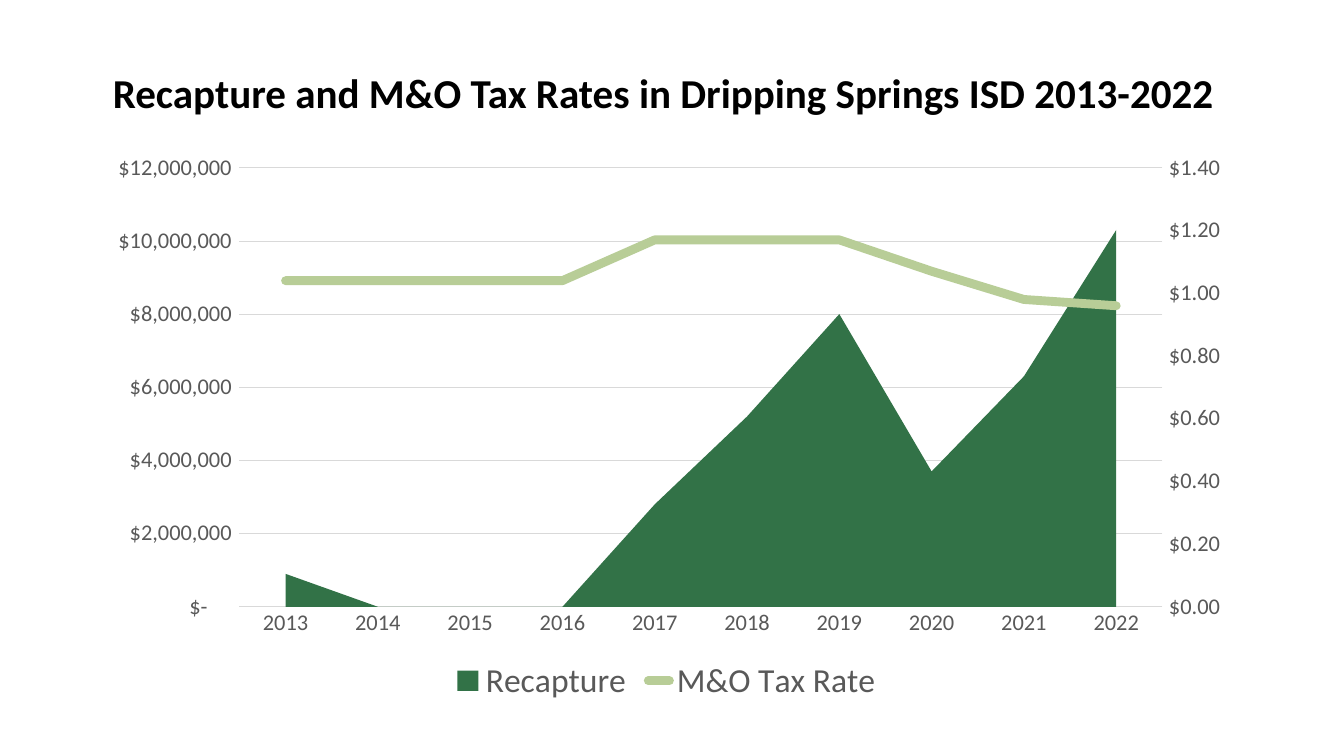
from copy import deepcopy

from pptx import Presentation
from pptx.chart.axis import ValueAxis
from pptx.chart.data import CategoryChartData
from pptx.dml.color import RGBColor
from pptx.enum.chart import XL_CHART_TYPE, XL_LEGEND_POSITION, XL_MARKER_STYLE, XL_TICK_MARK
from pptx.enum.text import MSO_ANCHOR, PP_ALIGN
from pptx.oxml import parse_xml
from pptx.oxml.ns import nsdecls, qn
from pptx.util import Cm, Pt

AREA = XL_CHART_TYPE.AREA
BOTTOM = XL_LEGEND_POSITION.BOTTOM
NO_MARKER = XL_MARKER_STYLE.NONE
TICK_NONE, TICK_OUTSIDE = XL_TICK_MARK.NONE, XL_TICK_MARK.OUTSIDE
LEFT, TOP = PP_ALIGN.LEFT, MSO_ANCHOR.TOP

FONT = "Calibri"
BLACK, GRAY, LIGHT_GRAY = "000000", "595959", "D9D9D9"
DARK_GREEN, LIGHT_GREEN = "327247", "B8CD97"

TITLE = "Recapture and M&O Tax Rates in Dripping Springs ISD 2013-2022"
YEARS = [str(year) for year in range(2013, 2023)]
RECAPTURE = [900000, 0, 0, 0, 2800000, 5200000, 8000000, 3700000, 6300000, 10300000]
TAX_RATES = [1.04, 1.04, 1.04, 1.04, 1.17, 1.17, 1.17, 1.07, 0.98, 0.96]
ACCOUNTING = '_("$"* #,##0_);_("$"* \\(#,##0\\);_("$"* "-"??_);_(@_)'
DOLLARS_AND_CENTS = '"$"#,##0.00'
RATE_CATEGORY_ID, RATE_VALUE_ID = "50010", "50020"


def color(hex_value):
    return RGBColor.from_string(hex_value)


def style_font(font, size, hex_value, bold=False):
    font.name, font.size, font.bold = FONT, Pt(size), bold
    font.color.rgb = color(hex_value)


def style_line(line, hex_value, width):
    line.color.rgb = color(hex_value)
    line.width = Pt(width)


def set_scale(axis, maximum, step, number_format):
    axis.minimum_scale, axis.maximum_scale, axis.major_unit = 0, maximum, step
    axis.tick_labels.number_format = number_format
    axis.tick_labels.number_format_is_linked = False


def add_title(slide, left, top, width, height):
    title = slide.shapes.title
    title.left, title.top, title.width, title.height = left, top, width, height
    frame = title.text_frame
    frame.text = TITLE
    frame.word_wrap = True
    frame.vertical_anchor = TOP
    paragraph = frame.paragraphs[0]
    paragraph.alignment = LEFT
    style_font(paragraph.runs[0].font, 44, BLACK, bold=True)


def style_axes(chart):
    for axis in (chart.category_axis, chart.value_axis):
        axis.major_tick_mark = axis.minor_tick_mark = TICK_NONE
        style_font(axis.tick_labels.font, 24, GRAY)
    style_line(chart.category_axis.format.line, LIGHT_GRAY, 0.75)
    value_axis = chart.value_axis
    value_axis.format.line.fill.background()
    value_axis.has_major_gridlines = True
    style_line(value_axis.major_gridlines.format.line, LIGHT_GRAY, 0.75)
    set_scale(value_axis, 12000000, 2000000, ACCOUNTING)
    value_axis._element.find(qn("c:crossBetween")).set("val", "between")


def move_rates_to_right_axis(chart):
    """Draw the second series as a line against its own pair of axes."""
    plot_area = chart._chartSpace.chart.plotArea
    area_plot = plot_area.find(qn("c:areaChart"))
    line_plot = parse_xml(
        f'<c:lineChart {nsdecls("c")}><c:grouping val="standard"/><c:varyColors val="0"/>'
        f'<c:marker val="1"/><c:axId val="{RATE_CATEGORY_ID}"/>'
        f'<c:axId val="{RATE_VALUE_ID}"/></c:lineChart>')
    line_plot.insert(2, area_plot.findall(qn("c:ser"))[1])
    area_plot.addnext(line_plot)

    value_element = chart.value_axis._element
    rate_axis_element = deepcopy(value_element)
    hidden_axis_element = deepcopy(chart.category_axis._element)
    value_element.addnext(rate_axis_element)
    rate_axis_element.addnext(hidden_axis_element)
    for element, own_id, crossing_id in (
            (rate_axis_element, RATE_VALUE_ID, RATE_CATEGORY_ID),
            (hidden_axis_element, RATE_CATEGORY_ID, RATE_VALUE_ID)):
        element.find(qn("c:axId")).set("val", own_id)
        element.find(qn("c:crossAx")).set("val", crossing_id)
    rate_axis_element.find(qn("c:axPos")).set("val", "r")
    rate_axis_element.find(qn("c:crosses")).set("val", "max")
    ValueAxis(hidden_axis_element).visible = False

    rate_axis = ValueAxis(rate_axis_element)
    rate_axis.has_major_gridlines = False
    rate_axis.major_tick_mark = TICK_OUTSIDE
    set_scale(rate_axis, 1.4, 0.2, DOLLARS_AND_CENTS)


def style_series(chart):
    area_plot, line_plot = chart.plots
    area_plot.vary_by_categories = False
    recapture, rates = area_plot.series[0], line_plot.series[0]
    recapture.format.fill.solid()
    recapture.format.fill.fore_color.rgb = color(DARK_GREEN)
    recapture.format.line.fill.background()
    style_line(rates.format.line, LIGHT_GREEN, 9.5)
    rates._element.find(qn("c:spPr")).find(qn("a:ln")).set("cap", "rnd")
    rates.marker.style = NO_MARKER
    rates.smooth = False


def set_plot_layout(chart, x, y, width, height):
    """Place the inner plot, as fractions of the chart."""
    plot_area = chart._chartSpace.chart.plotArea
    for layout in plot_area.findall(qn("c:layout")):
        plot_area.remove(layout)
    sizes = "".join(f'<c:{name} val="{value}"/>'
                    for name, value in zip("xywh", (x, y, width, height)))
    plot_area.insert(0, parse_xml(
        f'<c:layout {nsdecls("c")}><c:manualLayout><c:layoutTarget val="inner"/>'
        f'<c:xMode val="edge"/><c:yMode val="edge"/>{sizes}</c:manualLayout></c:layout>'))


def add_recapture_chart(slide, left, top, width, height):
    data = CategoryChartData()
    data.categories = YEARS
    data.add_series("Recapture", RECAPTURE)
    data.add_series("M&O Tax Rate", TAX_RATES)
    chart = slide.shapes.add_chart(AREA, left, top, width, height, data).chart
    chart.has_title = False
    style_font(chart.font, 10, BLACK)
    style_axes(chart)
    move_rates_to_right_axis(chart)
    style_series(chart)
    set_plot_layout(chart, 0.13, 0.045, 0.8, 0.776)
    chart.has_legend = True
    chart.legend.position = BOTTOM
    chart.legend.include_in_layout = False
    style_font(chart.legend.font, 36, GRAY)


def main():
    presentation = Presentation()
    presentation.slide_width, presentation.slide_height = Cm(50.8), Cm(28.58)
    slide = presentation.slides.add_slide(presentation.slide_layouts[5])
    add_recapture_chart(slide, Cm(3.38), Cm(5.38), Cm(43.61), Cm(21.39))
    add_title(slide, Cm(4.01), Cm(2.44), Cm(42.98), Cm(2.13))
    presentation.save("out.pptx")


if __name__ == "__main__":
    main()
